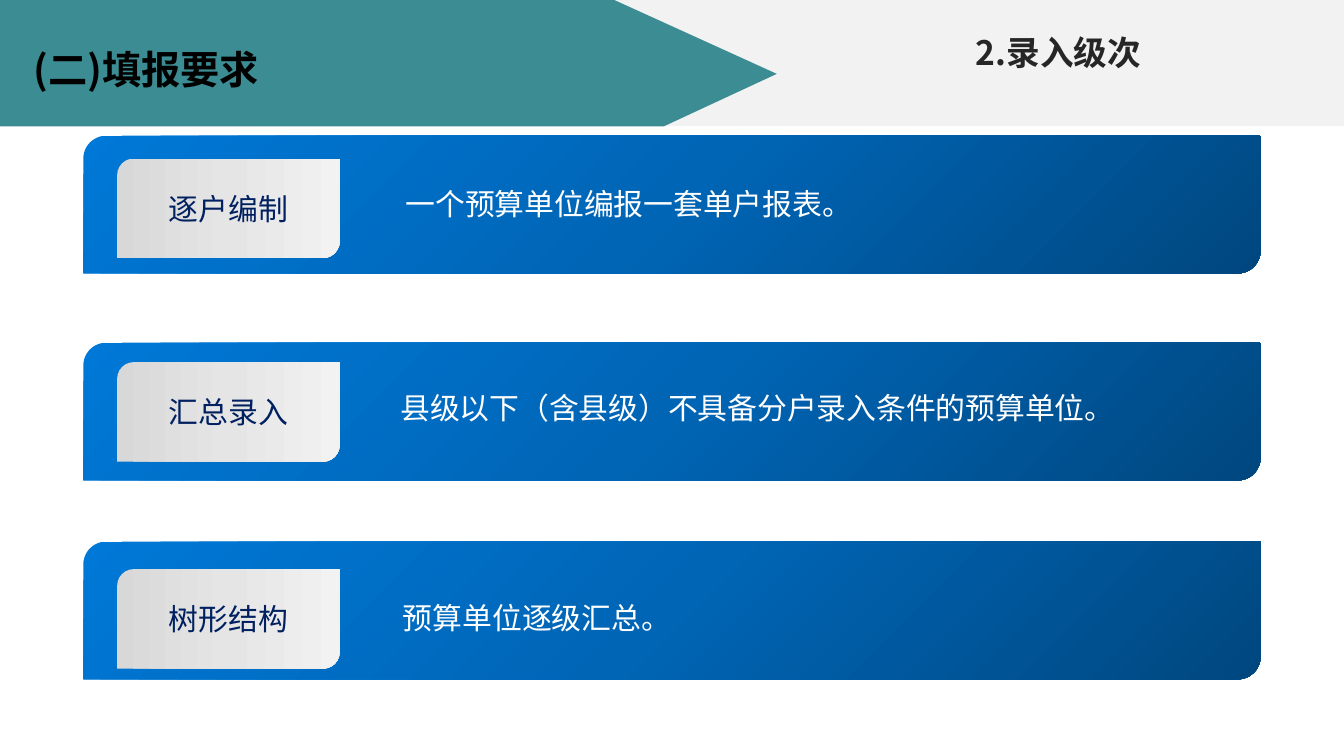
import pptx
import pptx.dml.color
import pptx.enum.shapes
import pptx.enum.text
import pptx.oxml.ns
import pptx.util
from lxml import etree

# The slide is a grid of square cells, 100 columns by 56.25 rows (16:9).
CELL = pptx.util.Inches(0.1)
COLUMNS, ROWS = 100, 56.25
FONT = "Noto Sans CJK SC"
COLORS = {
    "band": "F2F2F2",
    "arrow": "3C8C93",
    "heading": "000000",
    "topic": "262626",
    "label": "002060",
    "detail": "FFFFFF",
}
PANEL_STOPS = ["00477F", "0065B5", "0078D7"]
LABEL_STOPS = ["D8D8D8", "E5E5E5", "F2F2F2"]
HEADER_ROWS = 9.4

# label, detail, panel row, label row, detail column, detail row, detail columns
ITEMS = [
    ("逐户编制", "一个预算单位编报一套单户报表。", 10.1, 11.8, 29.2, 13.35, 35.3),
    ("汇总录入", "县级以下（含县级）不具备分户录入条件的预算单位。", 25.5, 26.95, 28.8, 28.5, 60.9),
    ("树形结构", "预算单位逐级汇总。", 40.3, 42.35, 29, 44.15, 60.9),
]


def cells(*counts):
    return [round(count * CELL) for count in counts]


def rgb(name):
    return pptx.dml.color.RGBColor.from_string(COLORS[name])


def make_plain(shape, color=None):
    shape.shadow.inherit = False
    shape.line.fill.background()
    if color:
        shape.fill.solid()
        shape.fill.fore_color.rgb = rgb(color)


def add_gradient(shape, stops, radial):
    """Fill with evenly spaced stops, from the bottom right corner if radial."""
    qn = pptx.oxml.ns.qn
    gradient = etree.Element(qn("a:gradFill"), rotWithShape="1")
    stop_list = etree.SubElement(gradient, qn("a:gsLst"))
    for index, color in enumerate(stops):
        position = index * 100000 // (len(stops) - 1)
        stop = etree.SubElement(stop_list, qn("a:gs"), pos=str(position))
        etree.SubElement(stop, qn("a:srgbClr"), val=color)
    if radial:
        circle = etree.SubElement(gradient, qn("a:path"), path="circle")
        etree.SubElement(circle, qn("a:fillToRect"), l="100000", t="100000")
    else:
        etree.SubElement(gradient, qn("a:lin"), ang="0", scaled="0")
    shape._element.spPr.find(qn("a:prstGeom")).addnext(gradient)


def write_text(frame, text, size, color, bold=False, centered=False):
    para = frame.paragraphs[0]
    para.text = text
    align = pptx.enum.text.PP_ALIGN
    para.alignment = align.CENTER if centered else align.LEFT
    para.font.size = pptx.util.Pt(size)
    para.font.bold = bold
    para.font.color.rgb = rgb(color)
    para.font.name = FONT
    qn = pptx.oxml.ns.qn
    properties = para._p.find(".//" + qn("a:defRPr"))
    properties.find(qn("a:latin")).addnext(etree.Element(qn("a:ea"), typeface=FONT))


def add_text(page, area, text, size, color, **style):
    frame = page.shapes.add_textbox(*cells(*area)).text_frame
    frame.word_wrap = True
    frame.auto_size = pptx.enum.text.MSO_AUTO_SIZE.SHAPE_TO_FIT_TEXT
    write_text(frame, text, size, color, **style)


def add_header(page):
    kind = pptx.enum.shapes.MSO_SHAPE.RECTANGLE
    band = page.shapes.add_shape(kind, *cells(19, 0, COLUMNS - 19, HEADER_ROWS))
    make_plain(band, "band")
    builder = page.shapes.build_freeform(0, 0, scale=CELL / 100)
    corners = [(45.7, 0), (57.8, 5.5), (49.4, HEADER_ROWS), (0, HEADER_ROWS)]
    builder.add_line_segments([(x * 100, y * 100) for x, y in corners], close=True)
    make_plain(builder.convert_to_shape(), "arrow")
    add_text(page, (57.8, 1.9, 41.9, 4), "2.录入级次", 18, "topic", bold=True, centered=True)
    add_text(page, (1.5, 2.9, 52.8, 4.5), "(二)填报要求", 21, "heading", bold=True)


def add_rounded(page, area, stops, radial=False):
    kind = pptx.enum.shapes.MSO_SHAPE.ROUND_2_DIAG_RECTANGLE
    shape = page.shapes.add_shape(kind, *cells(*area))
    make_plain(shape)
    add_gradient(shape, stops, radial)
    return shape


def add_item(page, label, detail, panel_row, label_row, detail_column, detail_row, detail_columns):
    add_rounded(page, (6.2, panel_row, 87.6, 10.25), PANEL_STOPS, radial=True)
    frame = add_rounded(page, (8.72, label_row, 16.55, 7.4), LABEL_STOPS).text_frame
    frame.margin_left = frame.margin_right = 0
    frame.vertical_anchor = pptx.enum.text.MSO_ANCHOR.MIDDLE
    write_text(frame, label, 16, "label", centered=True)
    add_text(page, (detail_column, detail_row, detail_columns, 3.7), detail, 16, "detail")


def main():
    deck = pptx.Presentation()
    deck.slide_width, deck.slide_height = cells(COLUMNS, ROWS)
    page = deck.slides.add_slide(deck.slide_layouts[6])
    add_header(page)
    for item in ITEMS:
        add_item(page, *item)
    deck.save("out.pptx")


if __name__ == "__main__":
    main()
